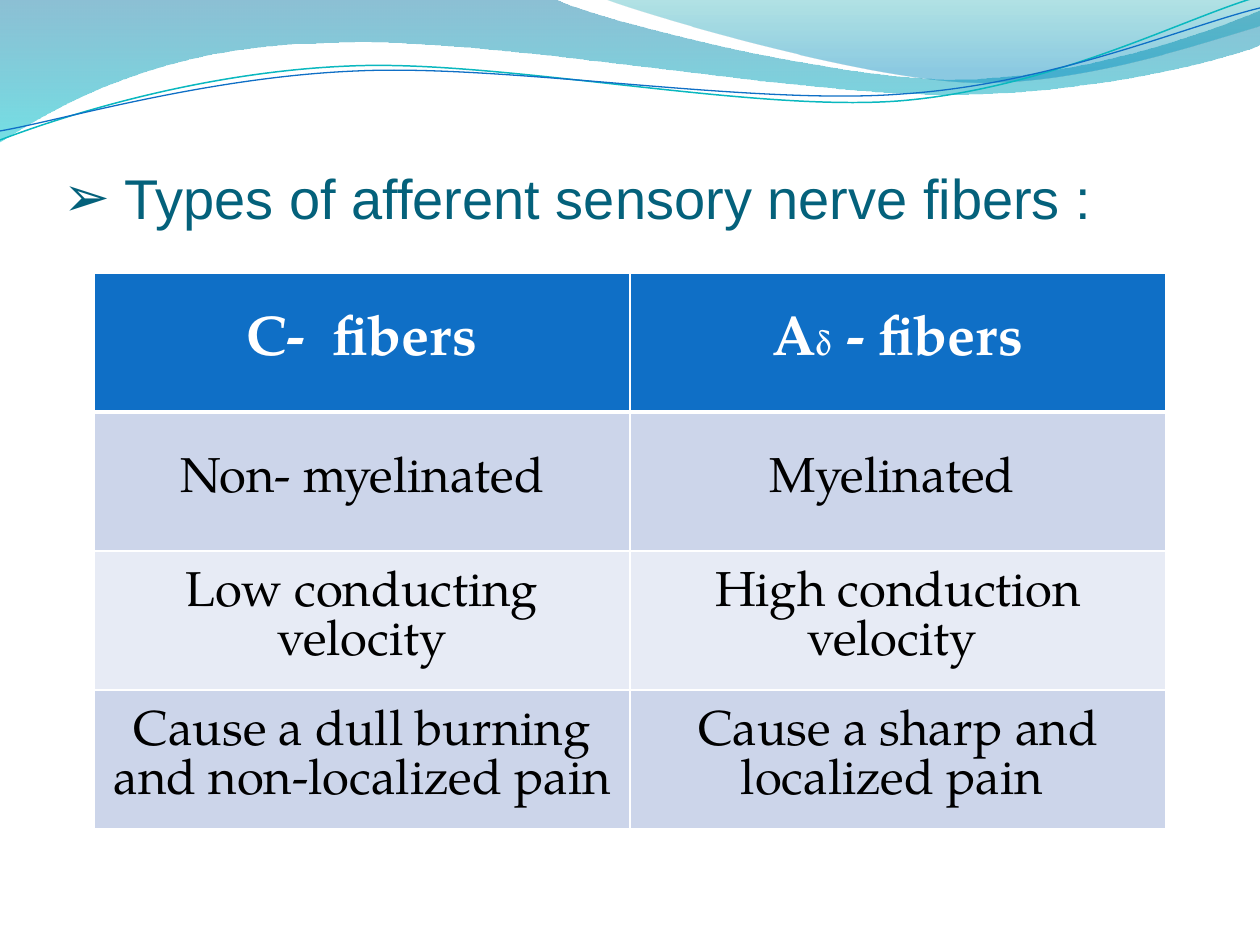
from dataclasses import dataclass
from pptx import Presentation
from pptx import util as u
from pptx.dml import color
from pptx.enum import text
from pptx.oxml import parse_xml
from pptx.oxml import ns

SCALE = 914400 / 126


@dataclass(frozen=True)
class Theme:
    blue: str = "0F6FC6"
    teal: str = "0AB8BF"
    title: str = "04617B"
    white: str = "FFFFFF"
    black: str = "000000"
    dark: str = "CCD5EA"
    light: str = "E7EBF5"
    band: tuple = ((0, "0074A1", 45), (100, "00C6CF", 55))
    fin: tuple = ((0, "00A1A9", 30), (80, "008BBF", 45))
    sans: str = "Arial"
    serif: str = "TeX Gyre Pagella"
    big: int = 32
    mid: int = 28
    small: int = 20


BAND = [(0, 0), (554, -1),
        (600, 21, 837, 79, 955, 79), (1075, 79, 1207, 33, 1260, 11),
        (1261, 45),
        (1239, 55, 1096, 96, 940, 94), (784, 94, 481, 35, 324, 43),
        (163, 45, 58, 105, -1, 142), (0, 0)]
FIN = [(604, -1), (641, 14, 859, 78, 969, 82),
       (1079, 86, 1211, 40, 1260, 26), (1260, 0), (604, -1)]
TEAL = [(0, 140), (60, 117, 199, 72, 349, 66),
        (498, 59, 747, 112, 898, 101), (1050, 89, 1182, 19, 1257, -3)]
BLUE = [(0, 131), (59, 121, 207, 77, 357, 71),
        (508, 64, 752, 106, 903, 94), (1053, 84, 1186, 26, 1260, 8)]


def px(n):
    return u.Emu(round(n * SCALE))


def rgb(code):
    return color.RGBColor.from_string(code)


def apply(item, vals):
    for key, val in vals.items():
        setattr(item, key, val)


def xml(body):
    return parse_xml(body.replace(" ", f" {ns.nsdecls('a')} ", 1))


def bend(shape, path):
    lines = iter(list(shape._element.iter(ns.qn("a:lnTo"))))
    for seg in path[1:]:
        first = next(lines)
        if len(seg) == 2:
            continue
        cubic = xml("<a:cubicBezTo />")
        first.addprevious(cubic)
        for line in (first, next(lines), next(lines)):
            cubic.append(line[0])
            line.getparent().remove(line)


class Deck:
    def __init__(self, theme):
        self.theme = theme
        self.file = Presentation()
        apply(self.file, {"slide_width": px(1260), "slide_height": px(945)})
        self.slide = self.file.slides.add_slide(self.file.slide_layouts[5])

    def font(self, item, face, size, code, bold=False):
        apply(item.font, {"name": face, "size": u.Pt(size), "bold": bold})
        item.font.color.rgb = rgb(code)

    def curve(self, path, close):
        pts = [seg[i:i + 2] for seg in path for i in range(0, len(seg), 2)]
        build = self.slide.shapes.build_freeform(*pts[0], scale=SCALE)
        build.add_line_segments(pts[1:], close=close)
        shape = build.convert_to_shape()
        bend(shape, path)
        shape.shadow.inherit = False
        return shape

    def wave(self, path, stops):
        shape = self.curve(path, True)
        shape.line.fill.background()
        marks = "".join(
            f'<a:gs pos="{pos * 1000}"><a:srgbClr val="{code}">'
            f'<a:alpha val="{alpha * 1000}"/></a:srgbClr></a:gs>'
            for pos, code, alpha in stops)
        grad = xml(f'<a:gradFill rotWithShape="1"><a:gsLst>{marks}</a:gsLst>'
                   '<a:lin ang="5400000" scaled="1"/></a:gradFill>')
        shape._element.spPr.find(ns.qn("a:custGeom")).addnext(grad)

    def line(self, path, code, width):
        shape = self.curve(path, False)
        shape.fill.background()
        shape.line.color.rgb = rgb(code)
        shape.line.width = u.Pt(width)

    def title(self, words, left, top, width, height):
        shape = self.slide.shapes.title
        self.slide.shapes._spTree.append(shape._element)
        apply(shape, {"left": px(left), "top": px(top),
                      "width": px(width), "height": px(height)})
        frame = shape.text_frame
        apply(frame, {"margin_left": 0, "margin_right": 0, "margin_top": u.Inches(0.05),
                      "margin_bottom": 0, "word_wrap": True,
                      "auto_size": text.MSO_AUTO_SIZE.NONE,
                      "vertical_anchor": text.MSO_ANCHOR.BOTTOM})
        para = frame.paragraphs[0]
        para.text = words
        para.alignment = text.PP_ALIGN.LEFT
        props = para._p.get_or_add_pPr()
        props.set("marL", "0")
        props.set("indent", "0")
        props.append(xml('<a:buFont typeface="Arial"/>'))
        props.append(xml('<a:buChar char="➢"/>'))
        self.font(para.runs[0], self.theme.sans, self.theme.big, self.theme.title)

    def cell(self, cell, runs, fill, code, bold, base):
        cell.vertical_anchor = text.MSO_ANCHOR.MIDDLE
        props = cell._tc.get_or_add_tcPr()
        for side, width in (("L", 1), ("R", 1), ("T", 1), ("B", base)):
            props.append(xml(f'<a:ln{side} w="{u.Pt(width)}"><a:solidFill><a:srgbClr '
                             f'val="{self.theme.white}"/></a:solidFill></a:ln{side}>'))
        cell.fill.solid()
        cell.fill.fore_color.rgb = rgb(fill)
        para = cell.text_frame.paragraphs[0]
        para.alignment = text.PP_ALIGN.CENTER
        if not runs[-1][0].endswith(" "):
            para._p.get_or_add_pPr().set("rtl", "1")
        for words, size in runs:
            run = para.add_run()
            run.text = words
            self.font(run, self.theme.serif, size, code, bold)

    def table(self, head, rows, left, top, wide, high):
        th = self.theme
        grid = self.slide.shapes.add_table(
            len(rows) + 1, len(head), px(left), px(top),
            px(wide * len(head)), px(high * (len(rows) + 1))).table
        for col in grid.columns:
            col.width = px(wide)
        for row in grid.rows:
            row.height = px(high)
        for c, runs in enumerate(head):
            self.cell(grid.cell(0, c), runs, th.blue, th.white, True, 3)
        for r, row in enumerate(rows, 1):
            fill = th.dark if r % 2 else th.light
            for c, words in enumerate(row):
                self.cell(grid.cell(r, c), [(words, th.mid)], fill, th.black, False, 1)


def main():
    th = Theme()
    deck = Deck(th)
    deck.wave(BAND, th.band)
    deck.wave(FIN, th.fin)
    deck.line(TEAL, th.teal, 0.85)
    deck.line(BLUE, th.blue, 0.75)
    deck.title(" Types of afferent sensory nerve fibers :", 63, 73, 1071, 158)
    head = [[("C-  fibers", th.big)],
            [("A", th.big), ("δ", th.small), (" - fibers", th.big)]]
    rows = [("Non- myelinated", "Myelinated "),
            ("Low conducting velocity", "High conduction velocity "),
            ("Cause a dull burning and non-localized pain",
             "Cause a sharp and localized pain ")]
    deck.table(head, rows, 94, 273, 536, 139)
    deck.file.save("out.pptx")


if __name__ == "__main__":
    main()
